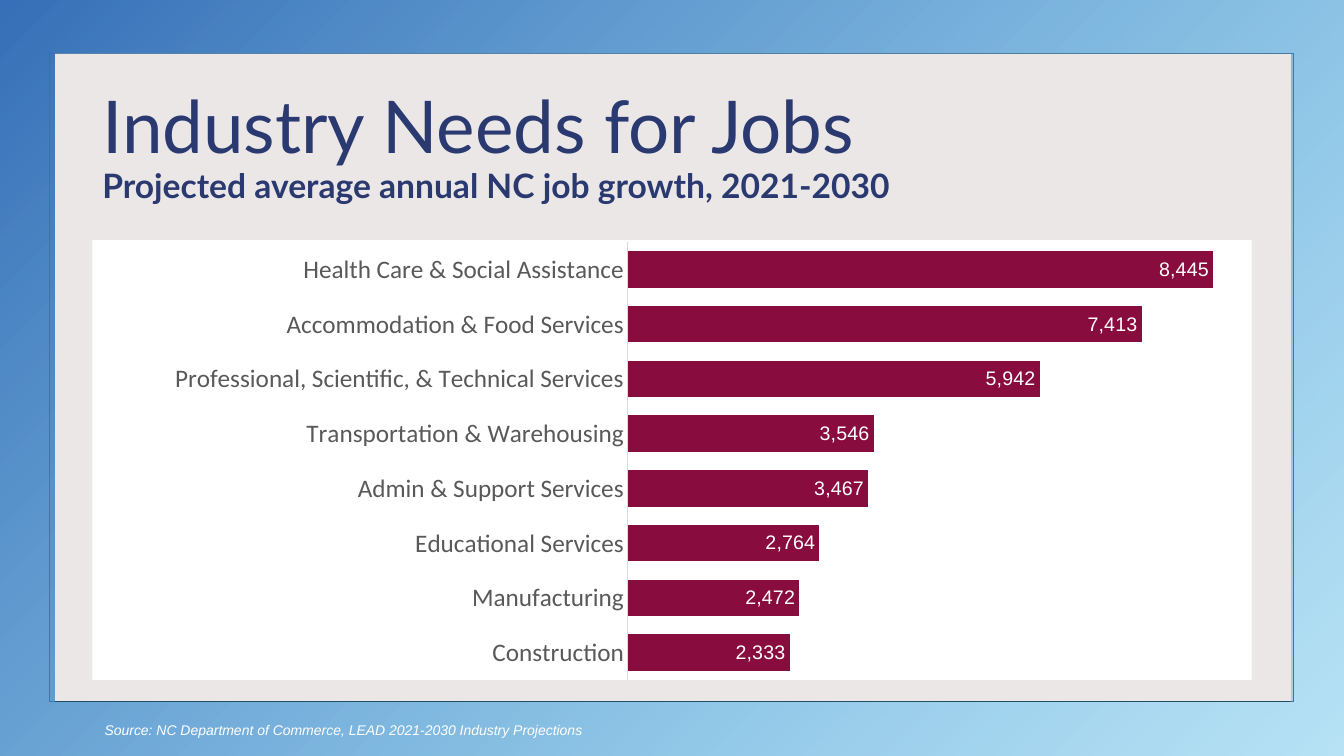
from lxml import etree
from pptx import Presentation
from pptx.chart.data import CategoryChartData
from pptx.dml.color import RGBColor
from pptx.enum.chart import XL_CHART_TYPE, XL_LABEL_POSITION, XL_TICK_MARK
from pptx.enum.shapes import MSO_SHAPE
from pptx.enum.text import MSO_ANCHOR, MSO_AUTO_SIZE, PP_ALIGN
from pptx.oxml import parse_xml
from pptx.oxml.ns import nsdecls, qn
from pptx.util import Pt

RECTANGLE, FRAME = MSO_SHAPE.RECTANGLE, MSO_SHAPE.FRAME
BAR_CLUSTERED = XL_CHART_TYPE.BAR_CLUSTERED
INSIDE_END = XL_LABEL_POSITION.INSIDE_END
NO_TICKS = XL_TICK_MARK.NONE
MIDDLE, TOP = MSO_ANCHOR.MIDDLE, MSO_ANCHOR.TOP
LEFT, RIGHT = PP_ALIGN.LEFT, PP_ALIGN.RIGHT
FIT_SHAPE, FIXED = MSO_AUTO_SIZE.SHAPE_TO_FIT_TEXT, MSO_AUTO_SIZE.NONE

NAVY = RGBColor(0x2A, 0x3A, 0x70)
MAROON = RGBColor(0x88, 0x0C, 0x3D)
BLUE = RGBColor(0x37, 0x70, 0xB8)
SKY = RGBColor(0x4C, 0xB7, 0xE7)
TEAL = RGBColor(0x21, 0x50, 0x65)
STONE = RGBColor(0xE8, 0xE2, 0xE2)
GRAY = RGBColor(0x59, 0x59, 0x59)
LIGHT_GRAY = RGBColor(0xD9, 0xD9, 0xD9)
WHITE = RGBColor(0xFF, 0xFF, 0xFF)
BLACK = RGBColor(0, 0, 0)

JOBS = {
    "Health Care & Social Assistance": 8445,
    "Accommodation & Food Services": 7413,
    "Professional, Scientific, & Technical Services": 5942,
    "Transportation & Warehousing": 3546,
    "Admin & Support Services": 3467,
    "Educational Services": 2764,
    "Manufacturing": 2472,
    "Construction": 2333,
}


class JobsSlide:
    heading_font, body_font, axis_font = "Lato", "Arial", "Calibri"
    number_format = "#,##0"

    def __init__(self, slide):
        self.slide = slide

    def shape(self, kind, *box):
        shape = self.slide.shapes.add_shape(kind, *map(Pt, box))
        shape.shadow.inherit = False
        return shape

    def panel(self, *box):
        panel = self.shape(RECTANGLE, *box)
        panel.fill.solid()
        panel.fill.fore_color.rgb = STONE
        color = panel.fill._xPr.find(".//" + qn("a:srgbClr"))
        etree.SubElement(color, qn("a:alpha"), val="80000")
        panel.line.color.rgb = TEAL
        panel.line.width = Pt(1)

    def gradient_frame(self, thickness, *box):
        frame = self.shape(FRAME, *box)
        frame.adjustments[0] = thickness
        frame.line.fill.background()
        gradient = parse_xml(
            f'<a:gradFill {nsdecls("a")} rotWithShape="1"><a:gsLst>'
            f'<a:gs pos="0"><a:srgbClr val="{BLUE}"/></a:gs>'
            f'<a:gs pos="100000"><a:srgbClr val="{SKY}"><a:alpha val="40000"/>'
            '</a:srgbClr></a:gs></a:gsLst><a:lin ang="2700000" scaled="0"/></a:gradFill>')
        frame._element.spPr.find(qn("a:prstGeom")).addnext(gradient)

    def text(self, words, box, run_styles, font, color, anchor=TOP, align=LEFT,
             wrap=True, fit=FIXED, spacing=1.0):
        frame = self.slide.shapes.add_textbox(*map(Pt, box)).text_frame
        frame.text = words
        frame.word_wrap, frame.auto_size = wrap, fit
        frame.vertical_anchor = anchor
        paragraph = frame.paragraphs[0]
        paragraph.alignment, paragraph.line_spacing = align, spacing
        for run, (size, bold, italic) in zip(paragraph.runs, run_styles):
            run.font.name, run.font.size = font, Pt(size)
            run.font.bold, run.font.italic = bold, italic
            run.font.color.rgb = color

    def style_font(self, font, name, size, color):
        font.name, font.size, font.color.rgb = name, Pt(size), color

    def bar_chart(self, values, top_value, plot_area, *box):
        data = CategoryChartData(number_format=self.number_format)
        data.categories = list(values)[::-1]
        data.add_series("Series 1", list(values.values())[::-1])
        chart = self.slide.shapes.add_chart(BAR_CLUSTERED, *map(Pt, box), data).chart
        chart.has_legend = chart.has_title = False
        self.style_font(chart.font, self.body_font, 10, BLACK)

        # Axes
        industries, jobs = chart.category_axis, chart.value_axis
        industries.major_tick_mark = industries.minor_tick_mark = NO_TICKS
        self.style_font(industries.tick_labels.font, self.axis_font, 18, GRAY)
        industries.format.line.color.rgb = LIGHT_GRAY
        industries.format.line.width = Pt(0.75)
        jobs.minimum_scale, jobs.maximum_scale = 0, top_value
        jobs.has_major_gridlines = False
        jobs.visible = False

        # Bars and their values
        plot = chart.plots[0]
        plot.gap_width, plot.vary_by_categories = 50, False
        bars = plot.series[0]
        bars.format.fill.solid()
        bars.format.fill.fore_color.rgb = MAROON
        labels = bars.data_labels
        labels.show_value, labels.position = True, INSIDE_END
        labels.number_format, labels.number_format_is_linked = self.number_format, False
        self.style_font(labels.font, self.body_font, 14, WHITE)

        # White background and fixed inner plot area
        chart_part = chart.element.find(qn("c:chart"))
        chart_part.addnext(parse_xml(
            f'<c:spPr {nsdecls("c", "a")}><a:solidFill><a:srgbClr val="{WHITE}"/>'
            '</a:solidFill><a:ln><a:noFill/></a:ln></c:spPr>'))
        area = chart_part.find(qn("c:plotArea"))
        for layout in area.findall(qn("c:layout")):
            area.remove(layout)
        sides = "".join(f'<c:{side} val="{share}"/>'
                        for side, share in zip("xywh", plot_area))
        area.insert(0, parse_xml(
            f'<c:layout {nsdecls("c")}><c:manualLayout><c:layoutTarget val="inner"/>'
            '<c:xMode val="edge"/><c:yMode val="edge"/>'
            f'{sides}</c:manualLayout></c:layout>'))


def main():
    deck = Presentation()
    deck.slide_width, deck.slide_height = Pt(960), Pt(540)
    page = JobsSlide(deck.slides.add_slide(deck.slide_layouts[6]))

    # Backdrop
    page.panel(35.5, 38.2, 888.5, 463)
    page.gradient_frame(0.072, 0, 0, 960, 540)

    # Heading
    page.text("Industry Needs for Jobs\vProjected average annual NC job growth, 2021-2030",
              (66, 53.5, 828, 104.5), [(52, False, False), (24, True, False)],
              page.heading_font, NAVY, anchor=MIDDLE, spacing=0.9)

    # Job growth by industry
    page.bar_chart(JOBS, 9000, (0.462, 0.005, 0.538, 0.995), 66, 171.5, 828, 314.5)

    # Source line
    page.text("Source: NC Department of Commerce, LEAD 2021-2030 Industry Projections",
              (57, 512, 365.75, 19.4), [(10, False, True)], page.body_font, WHITE,
              align=RIGHT, wrap=False, fit=FIT_SHAPE)

    deck.save("out.pptx")


if __name__ == "__main__":
    main()
